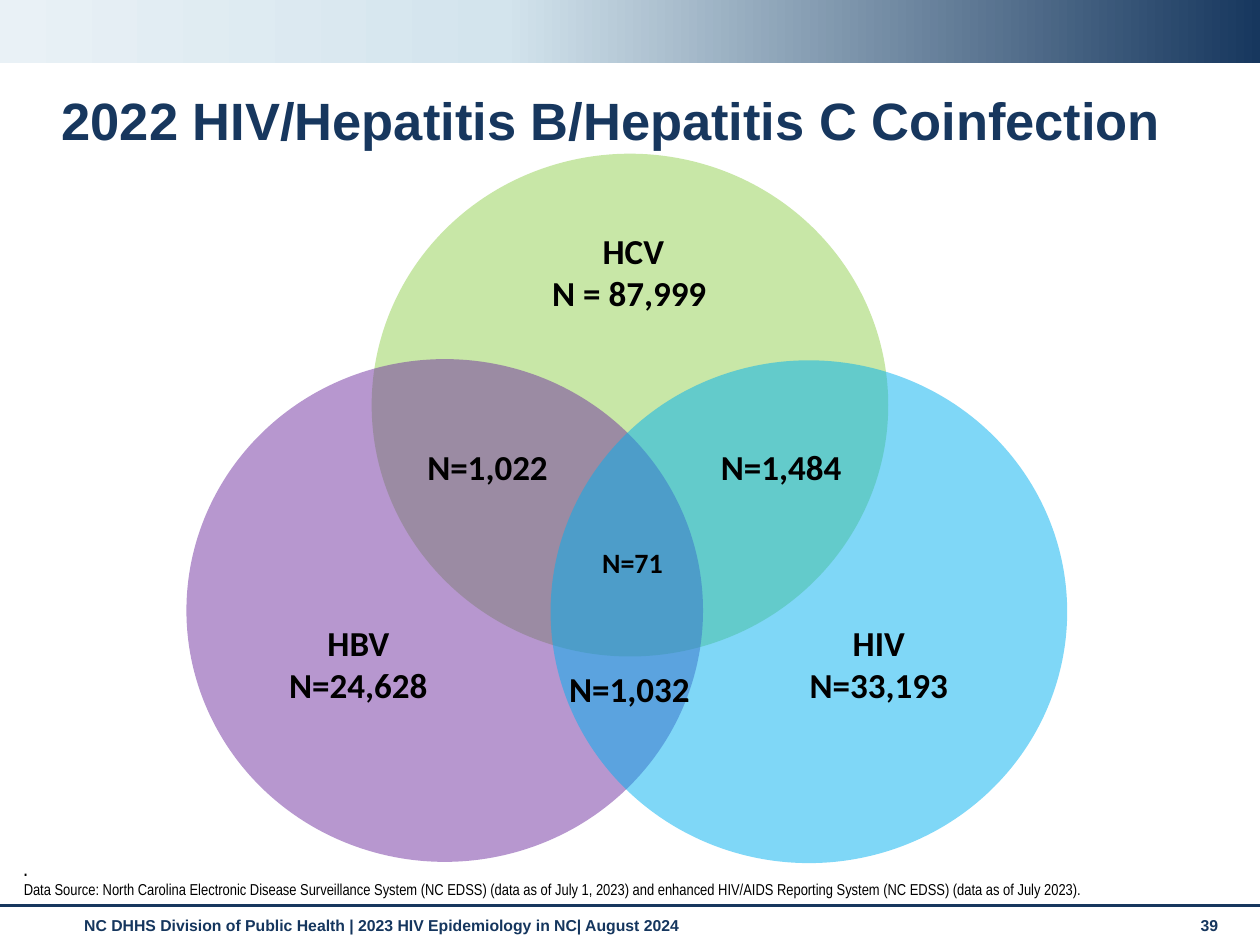
from copy import deepcopy
from dataclasses import dataclass

from lxml import etree
from pptx import Presentation
from pptx.dml.color import RGBColor
from pptx.enum.shapes import MSO_CONNECTOR, MSO_SHAPE
from pptx.enum.text import MSO_ANCHOR, PP_ALIGN
from pptx.oxml.ns import qn
from pptx.util import Emu, Pt

PX = 9144
WIDTH, HEIGHT = 1000, 750
STRAIGHT = MSO_CONNECTOR.STRAIGHT
OVAL, RECTANGLE = MSO_SHAPE.OVAL, MSO_SHAPE.RECTANGLE
TOP, MIDDLE = MSO_ANCHOR.TOP, MSO_ANCHOR.MIDDLE
LEFT, CENTER = PP_ALIGN.LEFT, PP_ALIGN.CENTER
COLORS = {
    "navy": "17375E",
    "footer": "15365E",
    "mist": "D3E4ED",
    "pale": "E9F1F6",
    "black": "000000",
    "hcv": "92D050",
    "hbv": "7030A0",
    "hiv": "00B0F0",
}
BAND_STOPS = [(0, "navy"), (0.6, "mist"), (1, "pale")]


@dataclass
class Circle:
    left: int
    top: int
    color: str
    width: int = 410
    height: int = 399


@dataclass
class Label:
    box: tuple[int, int, int, int]
    lines: list[str]
    size: int = 20
    font: str = "Calibri"
    color: str = "black"
    bold: tuple[bool, ...] = (True, True)
    align: PP_ALIGN = CENTER
    anchor: MSO_ANCHOR = TOP
    spacing: float = 1.0


CIRCLES = [
    Circle(295, 122, "hcv"),
    Circle(148, 285, "hbv"),
    Circle(437, 286, "hiv"),
]
FOOTER = {"size": 9, "font": "Arial", "color": "footer", "align": LEFT}
FRAME_LABELS = [
    Label((57, 722, 874, 29),
          ["NC DHHS Division of Public Health | 2023 HIV Epidemiology in NC| August 2024"],
          **FOOTER),
    Label((943, 722, 44, 30), ["39"], **FOOTER),
    Label((39, 68, 961, 60), ["2022 HIV/Hepatitis B/Hepatitis C Coinfection"],
          30, "Arial", "navy", align=LEFT, anchor=MIDDLE, spacing=0.9),
    Label((9, 678, 1039, 45),
          [".", "Data Source: North Carolina Electronic Disease Surveillance System (NC EDSS) "
                "(data as of July 1, 2023) and enhanced HIV/AIDS Reporting System (NC EDSS) "
                "(data as of July 2023)."],
          9, "Arial Narrow", bold=(True, False), align=LEFT),
]
VENN_LABELS = [
    Label((390, 177, 219, 77), [" HCV", "N = 87,999"]),
    Label((181, 488, 207, 77), ["HBV", "N=24,628"]),
    Label((592, 488, 211, 77), ["HIV", "N=33,193"]),
    Label((316, 349, 142, 44), ["N=1,022"]),
    Label((549, 349, 142, 44), ["N=1,484"]),
    Label((429, 525, 141, 44), ["N=1,032"]),
    Label((440, 428, 124, 37), ["N=71"], 16),
]


def px(*lengths: int) -> list[Emu]:
    return [Emu(length * PX) for length in lengths]


def rgb(name: str) -> RGBColor:
    return RGBColor.from_string(COLORS[name])


def apply(target, values: dict) -> None:
    for attribute, value in values.items():
        setattr(target, attribute, value)


def draw_band(slide) -> None:
    band = slide.shapes.add_shape(RECTANGLE, *px(0, 0, WIDTH, 50))
    band.shadow.inherit = False
    band.line.fill.background()
    band.fill.gradient()
    band.fill.gradient_angle = 180
    stop_list = band._element.spPr.find(".//" + qn("a:gsLst"))
    stop_list.append(deepcopy(stop_list[-1]))
    for stop, (position, color) in zip(band.fill.gradient_stops, BAND_STOPS):
        stop.position = position
        stop.color.rgb = rgb(color)


def draw_footer_rule(slide) -> None:
    rule = slide.shapes.add_connector(STRAIGHT, *px(0, 719, WIDTH, 719))
    rule.line.color.rgb = rgb("navy")
    rule.line.width = Pt(1.75)
    etree.SubElement(rule._element.spPr, qn("a:effectLst"))


def draw_circle(slide, circle: Circle) -> None:
    oval = slide.shapes.add_shape(
        OVAL, *px(circle.left, circle.top, circle.width, circle.height))
    oval.shadow.inherit = False
    oval.line.fill.background()
    oval.fill.solid()
    oval.fill.fore_color.rgb = rgb(circle.color)
    tint = oval._element.spPr.find(qn("a:solidFill"))[0]
    etree.SubElement(tint, qn("a:alpha"), val="50000")


def draw_label(slide, label: Label) -> None:
    frame = slide.shapes.add_textbox(*px(*label.box)).text_frame
    apply(frame, {"word_wrap": True, "vertical_anchor": label.anchor,
                  "text": "\n".join(label.lines)})
    for paragraph, bold in zip(frame.paragraphs, label.bold):
        apply(paragraph, {"alignment": label.align, "line_spacing": label.spacing})
        font = paragraph.runs[0].font
        apply(font, {"name": label.font, "size": Pt(label.size), "bold": bold})
        font.color.rgb = rgb(label.color)


def main() -> None:
    deck = Presentation()
    deck.slide_width, deck.slide_height = px(WIDTH, HEIGHT)
    slide = deck.slides.add_slide(deck.slide_layouts[6])
    draw_band(slide)
    draw_footer_rule(slide)
    for label in FRAME_LABELS:
        draw_label(slide, label)
    for circle in CIRCLES:
        draw_circle(slide, circle)
    for label in VENN_LABELS:
        draw_label(slide, label)
    deck.save("out.pptx")


if __name__ == "__main__":
    main()
